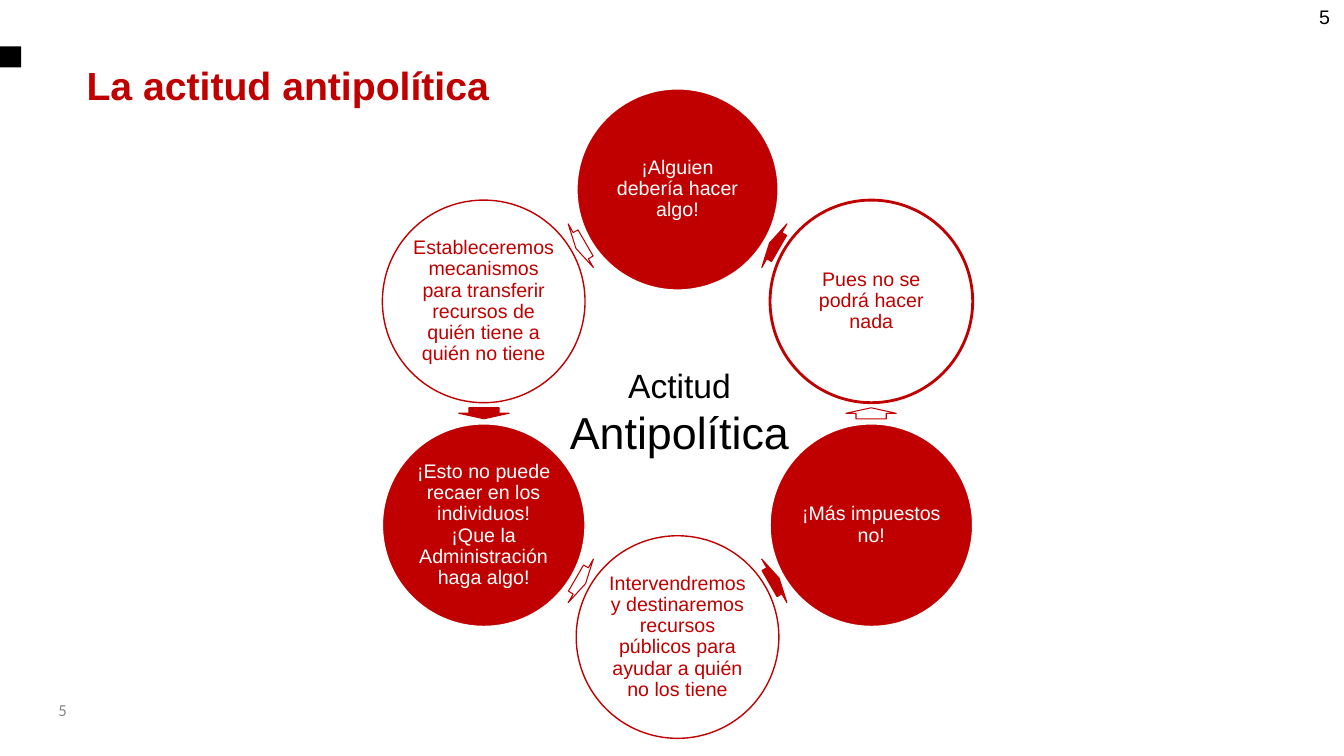
from math import cos, radians, sin
from pptx import Presentation
from pptx.dml.color import RGBColor
from pptx.enum import shapes, text
from pptx.util import Inches, Pt

THEME = {
    "red": "C00000", "white": "FFFFFF", "black": "000000", "gray": "888888",
    "font": "Arial", "foot": "Calibri",
    "title": 28, "body": 14, "small": 12, "lead": 24, "hub": 32,
}
TITLE = "La actitud antipolítica"
HUB = [("Actitud", "lead"), ("Antipolítica", "hub")]
STEPS = [
    ("¡Alguien debería hacer algo!", 2),
    ("Pues no se podrá hacer nada", 2),
    ("¡Más impuestos no!", 1),
    ("Intervendremos y destinaremos recursos públicos para ayudar a quién no los tiene", 1),
    ("¡Esto no puede recaer en los individuos!\v¡Que la Administración haga algo!", 1),
    ("Estableceremos mecanismos para transferir recursos de quién tiene a quién no tiene", 1),
]
PAGE = "5"
MID = (6.72, 4.1)
RING, GAP = 2.22, 1.92
DISC = (2.01, 2.01)
ARROW = (0.11, 0.5)
ALIGN, ANCHOR = text.PP_ALIGN, text.MSO_ANCHOR

deck = Presentation()
deck.slide_width, deck.slide_height = Inches(13.33), Inches(7.5)
slide = deck.slides.add_slide(deck.slide_layouts[6])


def color(name):
    return RGBColor.from_string(THEME[name])


def style(para, size, tint, align=ALIGN.LEFT, font="font", bold=False):
    para.alignment = align
    for run in para.runs:
        run.font.name = THEME[font]
        run.font.size = Pt(THEME[size])
        run.font.bold = bold
        run.font.color.rgb = color(tint)


def draw(kind, box, fill, edge=None, width=1):
    shape = slide.shapes.add_shape(kind, *map(Inches, box))
    shape.shadow.inherit = False
    shape.fill.solid()
    shape.fill.fore_color.rgb = color(fill)
    if edge:
        shape.line.color.rgb = color(edge)
        shape.line.width = Pt(width)
    else:
        shape.line.fill.background()
    return shape


def write(box, words, wrap=True, anchor=ANCHOR.TOP):
    frame = slide.shapes.add_textbox(*map(Inches, box)).text_frame
    frame.word_wrap = wrap
    frame.vertical_anchor = anchor
    frame.text = words
    return frame


def place(angle, reach, size):
    turn = radians(angle)
    x, y = MID[0] + reach * sin(turn), MID[1] - reach * cos(turn)
    return (x - size[0] / 2, y - size[1] / 2, *size)


draw(shapes.MSO_SHAPE.RECTANGLE, (0, 0.46, 0.21, 0.21), "black")
title = write((0.76, 0.56, 5.72, 0.68), TITLE)
style(title.paragraphs[0], "title", "red", bold=True)

step = 360 / len(STEPS)
for i, (words, width) in enumerate(STEPS):
    fill, ink = ("white", "red") if i % 2 else ("red", "white")
    edge = "red" if i % 2 else "white"
    disc = draw(shapes.MSO_SHAPE.OVAL, place(i * step, RING, DISC), fill, edge, width)
    frame = disc.text_frame
    frame.word_wrap = True
    frame.vertical_anchor = ANCHOR.MIDDLE
    frame.margin_left = frame.margin_right = frame.margin_top = frame.margin_bottom = 0
    frame.text = words
    para = frame.paragraphs[0]
    para.line_spacing = 0.9
    style(para, "body", ink, ALIGN.CENTER)

    angle = (i + 0.5) * step
    arrow = draw(shapes.MSO_SHAPE.RIGHT_ARROW, place(angle, GAP, ARROW), fill, "red", 0.75)
    arrow.adjustments[0] = 0.6
    arrow.adjustments[1] = 0.5
    arrow.rotation = (angle + 180) % 360

hub = write((5.54, 3.57, 2.4, 1.04), "\n".join(words for words, size in HUB), wrap=False)
for para, (words, size) in zip(hub.paragraphs, HUB):
    style(para, size, "black", ALIGN.CENTER)

foot = write((0.48, 6.84, 3, 0.4), PAGE, anchor=ANCHOR.MIDDLE)
style(foot.paragraphs[0], "small", "gray", font="foot")
head = write((12.89, 0, 0.4, 0.4), PAGE)
style(head.paragraphs[0], "body", "black", ALIGN.RIGHT)

deck.save("out.pptx")
